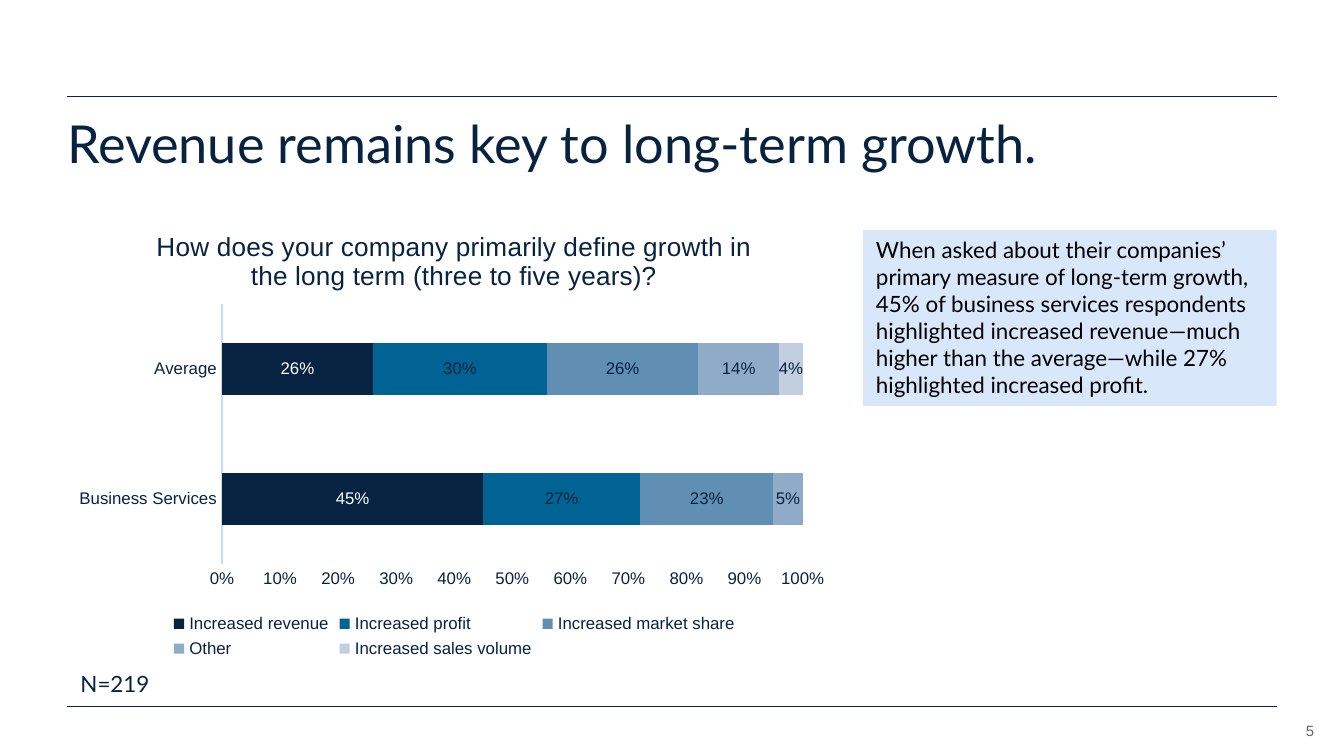
from dataclasses import dataclass

from lxml.etree import SubElement
from pptx import Presentation
from pptx.chart.data import CategoryChartData
from pptx.dml.color import RGBColor
from pptx.enum.chart import XL_CHART_TYPE, XL_LABEL_POSITION, XL_LEGEND_POSITION, XL_TICK_MARK
from pptx.enum.shapes import MSO_CONNECTOR, MSO_SHAPE
from pptx.enum.text import MSO_ANCHOR, PP_ALIGN
from pptx.oxml import parse_xml
from pptx.oxml.ns import nsdecls, qn
from pptx.util import Pt


@dataclass(frozen=True)
class Theme:
    """Colours, fonts and type sizes of the slide."""
    navy: str = "082241"
    white: str = "FFFFFF"
    black: str = "000000"
    grey: str = "666666"
    callout: str = "D8E8FA"
    axis: str = "C5DCF8"
    text_font: str = "Lato"
    chart_font: str = "Arial"
    title_size: float = 28
    chart_title_size: float = 14
    body_size: float = 12
    label_size: float = 9
    number_size: float = 8


THEME = Theme()
CATEGORIES = ("Business Services", "Average")
SERIES = (
    ("Increased revenue", (0.45, 0.26), "082241", THEME.white),
    ("Increased profit", (0.27, 0.30), "006393", THEME.navy),
    ("Increased market share", (0.23, 0.26), "618EB3", THEME.navy),
    ("Other", (0.05, 0.14), "8FABC8", THEME.navy),
    ("Increased sales volume", (None, 0.04), "C1CEDF", THEME.navy),
)


def rgb(value):
    """Turn a hex string into a colour."""
    return RGBColor.from_string(value)


def style_font(font, size, color, name):
    """Set the size, colour and typeface of a font."""
    font.size = Pt(size)
    font.color.rgb = rgb(color)
    font.name = name
    font.bold = False


def write_text(shape, text, size, color, name=THEME.text_font, align=PP_ALIGN.LEFT, inset=True):
    """Fill a shape with one wrapped paragraph and return that paragraph."""
    frame = shape.text_frame
    frame.word_wrap = True
    frame.vertical_anchor = MSO_ANCHOR.TOP
    if not inset:
        frame.margin_left = frame.margin_right = frame.margin_top = frame.margin_bottom = 0
    para = frame.paragraphs[0]
    para.text = text
    para.alignment = align
    style_font(para.font, size, color, name)
    return para


def add_rule(page, left, top, width):
    """Draw a thin horizontal rule."""
    rule = page.shapes.add_connector(
        MSO_CONNECTOR.STRAIGHT, Pt(left), Pt(top), Pt(left + width), Pt(top))
    rule.line.color.rgb = rgb(THEME.navy)
    rule.line.width = Pt(0.5)
    SubElement(rule.element.spPr, qn("a:effectLst"))


def add_title(page, box, text):
    """Place the slide title."""
    title = page.shapes.add_textbox(*map(Pt, box))
    para = write_text(title, text, THEME.title_size, THEME.navy, inset=False)
    para.line_spacing = 0.9


def add_callout(page, box, text):
    """Place the tinted box that explains the chart."""
    callout = page.shapes.add_shape(MSO_SHAPE.RECTANGLE, *map(Pt, box))
    callout.shadow.inherit = False
    callout.fill.solid()
    callout.fill.fore_color.rgb = rgb(THEME.callout)
    callout.line.fill.background()
    write_text(callout, text, THEME.body_size, THEME.black)


def add_sample_note(page, box, text):
    """Place the sample size below the chart."""
    write_text(page.shapes.add_textbox(*map(Pt, box)), text, THEME.body_size, THEME.navy)


def add_page_number(page, box, text):
    """Place the page number in the footer."""
    number = page.shapes.add_textbox(*map(Pt, box))
    write_text(number, text, THEME.number_size, THEME.grey, THEME.chart_font,
               PP_ALIGN.RIGHT, inset=False)
    number.text_frame.vertical_anchor = MSO_ANCHOR.BOTTOM


def set_plot_area(chart, left, top, width, height):
    """Fix the inner plot area, given as fractions of the chart."""
    area = chart.element.find(f".//{qn('c:plotArea')}")
    for layout in area.findall(qn("c:layout")):
        area.remove(layout)
    area.insert(0, parse_xml(
        f'<c:layout {nsdecls("c")}><c:manualLayout><c:layoutTarget val="inner"/>'
        f'<c:xMode val="edge"/><c:yMode val="edge"/><c:x val="{left}"/><c:y val="{top}"/>'
        f'<c:w val="{width}"/><c:h val="{height}"/></c:manualLayout></c:layout>'))


def style_axes(chart):
    """Strip ticks and gridlines and set the axis text."""
    for axis in (chart.category_axis, chart.value_axis):
        axis.has_major_gridlines = False
        axis.major_tick_mark = axis.minor_tick_mark = XL_TICK_MARK.NONE
        style_font(axis.tick_labels.font, THEME.label_size, THEME.navy, THEME.chart_font)
    chart.category_axis.format.line.color.rgb = rgb(THEME.axis)
    chart.category_axis.format.line.width = Pt(0.75)
    chart.value_axis.format.line.fill.background()
    chart.value_axis.tick_labels.number_format = "0%"
    chart.value_axis.tick_labels.number_format_is_linked = False


def style_series(series, fill, label_color):
    """Colour one series and centre its percentage labels."""
    series.format.fill.solid()
    series.format.fill.fore_color.rgb = rgb(fill)
    labels = series.data_labels
    labels.show_value = True
    labels.number_format = "0%"
    labels.number_format_is_linked = False
    labels.position = XL_LABEL_POSITION.CENTER
    style_font(labels.font, THEME.label_size, label_color, THEME.chart_font)


def add_growth_chart(page, box, title):
    """Place the stacked bar chart of growth measures."""
    chart_data = CategoryChartData(number_format="0%")
    chart_data.categories = CATEGORIES
    for name, values, *_ in SERIES:
        chart_data.add_series(name, values)
    chart = page.shapes.add_chart(
        XL_CHART_TYPE.BAR_STACKED_100, *map(Pt, box), chart_data).chart
    style_font(chart.font, 10, THEME.navy, THEME.chart_font)

    chart.has_title = True
    chart.chart_title.include_text_in_layout = False
    para = chart.chart_title.text_frame.paragraphs[0]
    para.text = title
    style_font(para.font, THEME.chart_title_size, THEME.navy, THEME.chart_font)

    chart.has_legend = True
    chart.legend.position = XL_LEGEND_POSITION.BOTTOM
    chart.legend.include_in_layout = False
    style_font(chart.legend.font, THEME.label_size, THEME.navy, THEME.chart_font)

    plot = chart.plots[0]
    plot.gap_width = 150
    plot.overlap = 100
    plot.vary_by_categories = False
    for series, (_, _, fill, label_color) in zip(plot.series, SERIES):
        style_series(series, fill, label_color)
    style_axes(chart)
    set_plot_area(chart, 0.2, 0.21, 0.75, 0.57)


def main():
    """Build the slide and save the deck."""
    deck = Presentation()
    deck.slide_width, deck.slide_height = Pt(720), Pt(405)
    page = deck.slides.add_slide(deck.slide_layouts[6])
    margin, width = 36, 648
    for top in (51.8, 378.7):
        add_rule(page, margin, top, width)
    add_page_number(page, (670.3, 383, 33.8, 13), "5")
    add_title(page, (margin, 63.4, width, 39.6), "Revenue remains key to long-term growth.")
    add_callout(page, (462.2, 123.1, 221.8, 94.3),
                "When asked about their companies’ primary measure of long-term growth, "
                "45% of business services respondents highlighted increased revenue—much "
                "higher than the average—while 27% highlighted increased profit.")
    add_growth_chart(page, (margin, 111.6, 414.7, 244.1),
                     "How does your company primarily define growth in the long term "
                     "(three to five years)?")
    add_sample_note(page, (margin, 355.7, 97.2, 21.6), "N=219")
    deck.save("out.pptx")


if __name__ == "__main__":
    main()
